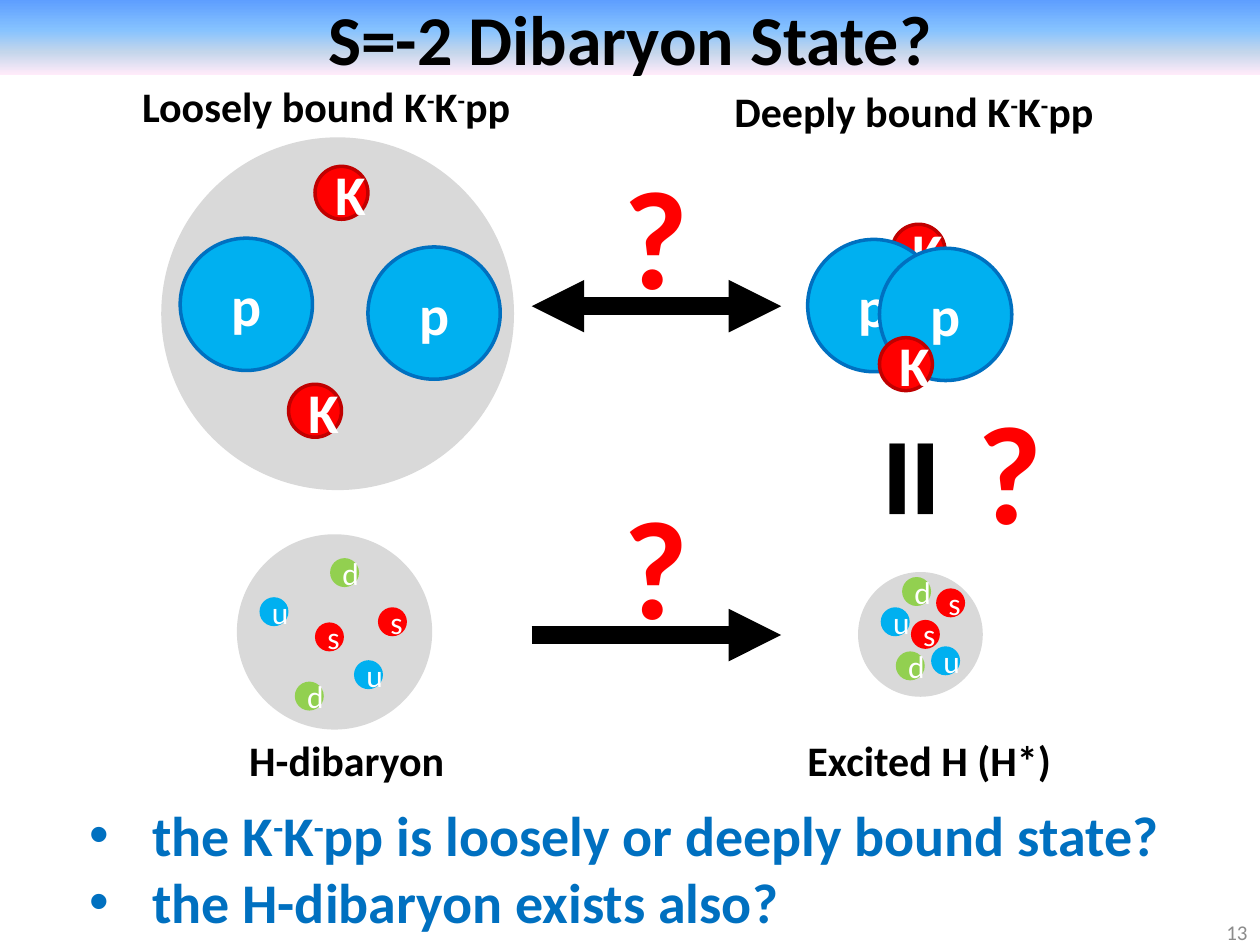
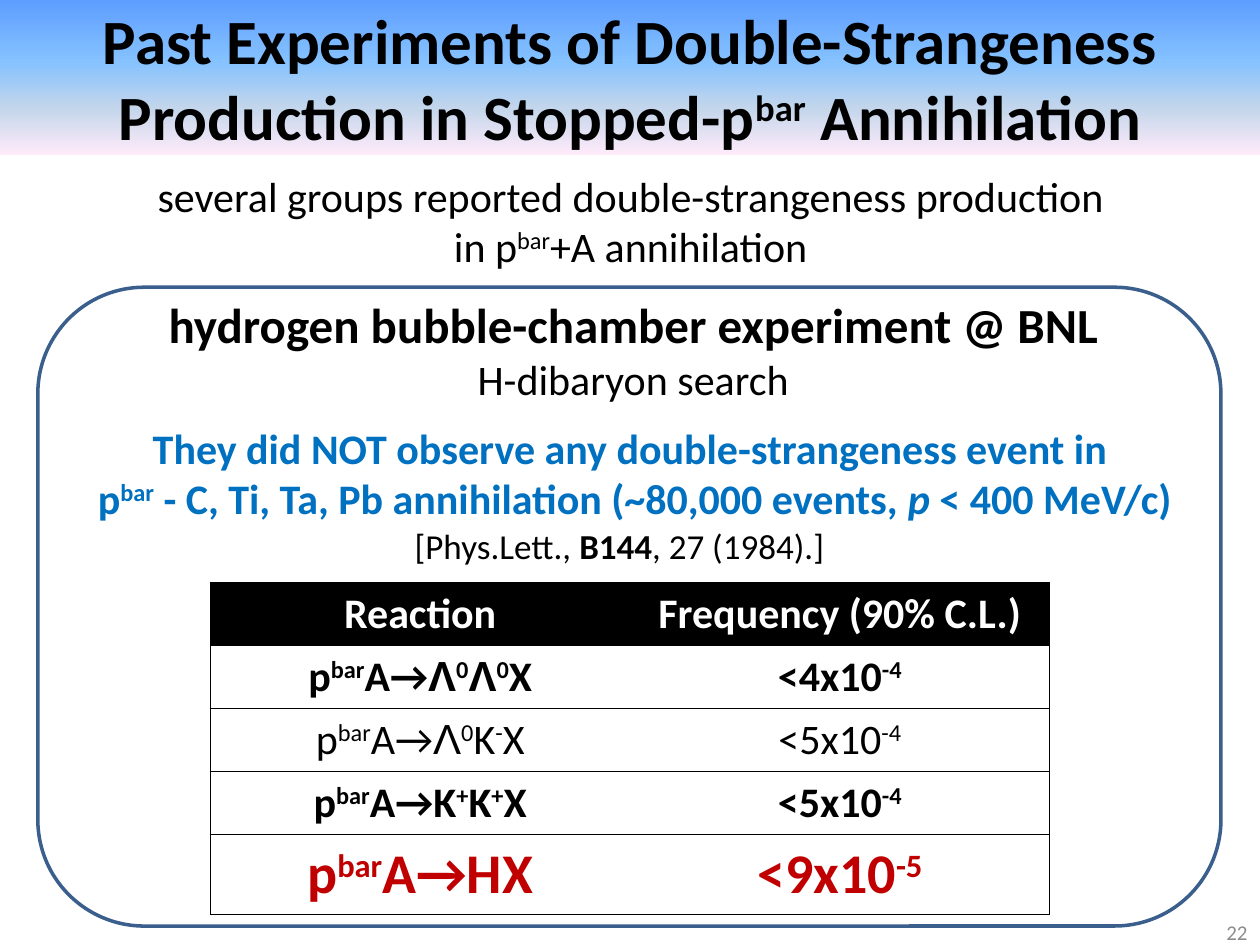
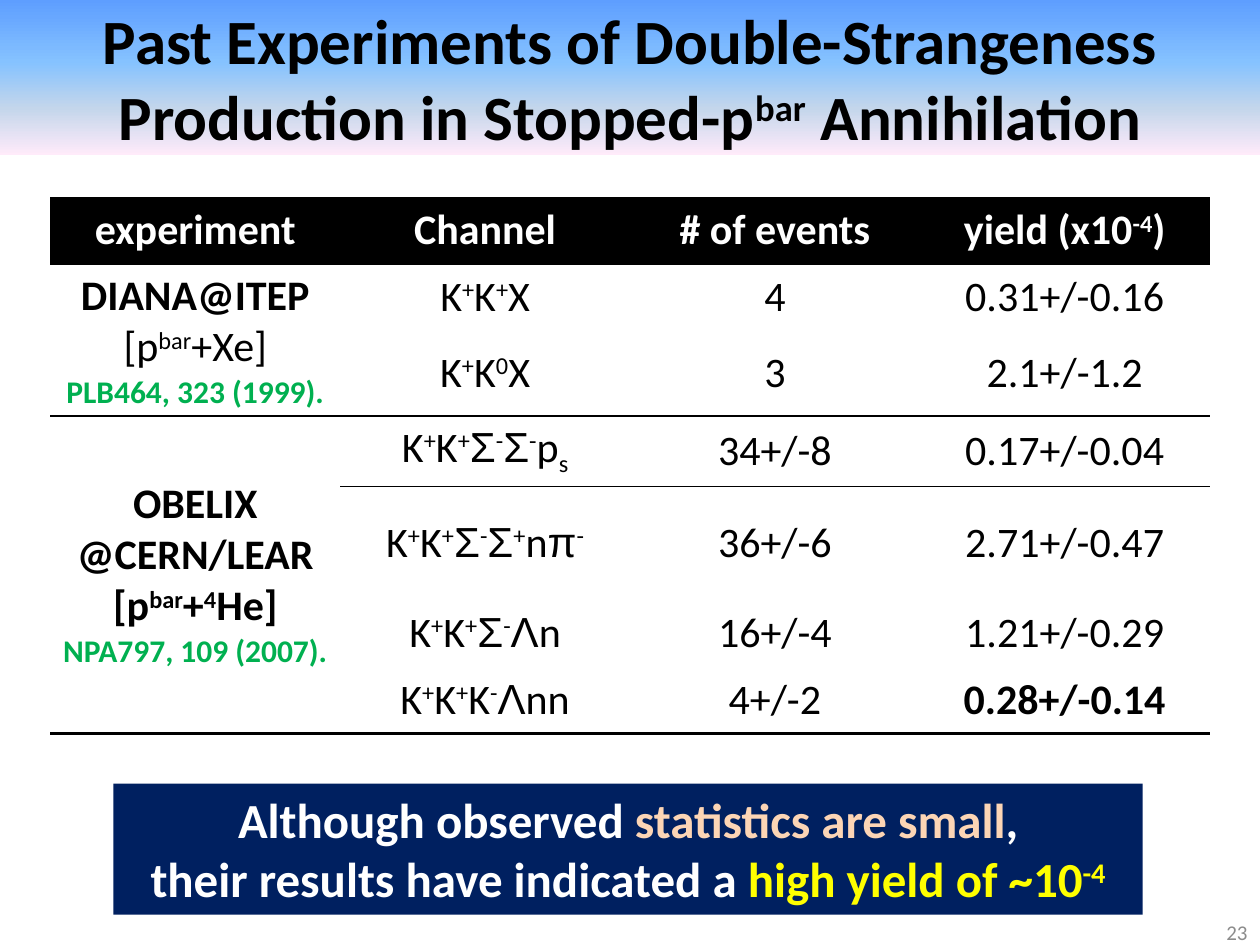
from lxml import etree
from pptx import Presentation
from pptx.dml.color import RGBColor
from pptx.enum.shapes import MSO_CONNECTOR, MSO_SHAPE
from pptx.enum.text import MSO_ANCHOR, MSO_AUTO_SIZE, PP_ALIGN
from pptx.oxml import parse_xml
from pptx.oxml.ns import nsdecls, qn
from pptx.util import Inches, Pt

LEFT, CENTER, RIGHT = PP_ALIGN.LEFT, PP_ALIGN.CENTER, PP_ALIGN.RIGHT
MIDDLE, TOP = MSO_ANCHOR.MIDDLE, MSO_ANCHOR.TOP
OVAL, ROUNDED, RECT = MSO_SHAPE.OVAL, MSO_SHAPE.ROUNDED_RECTANGLE, MSO_SHAPE.RECTANGLE
STRAIGHT = MSO_CONNECTOR.STRAIGHT
FIT = MSO_AUTO_SIZE.SHAPE_TO_FIT_TEXT

COLORS = {
    "black": "000000", "white": "FFFFFF", "gray": "D9D9D9", "number": "8C8C8C",
    "red": "FF0000", "dark_red": "C00000", "sky": "00B0F0", "blue": "0070C0",
    "lime": "92D050", "green": "00B050", "navy": "002060", "outline": "3A5F8C",
    "peach": "FCD5B5", "yellow": "FFFF00",
}
RGB = {name: RGBColor.from_string(value) for name, value in COLORS.items()}
BAND = [(0, "5E9EFF"), (40, "85C2FF"), (70, "C4D6EB"), (100, "FFEBFA")]
MARKS = {
    "^": {"baseline": "30000"}, "_": {"baseline": "-25000"},
    "!": {"bold": True}, "/": {"italic": True},
    "§": {"color": "peach"}, "¤": {"color": "yellow"},
}
NO_STYLE = "{2D5ABB26-0587-4C30-8999-92F81FD0307C}"


def write(tf, paras, align, **base):
    for i, para in enumerate(paras):
        text, extra = (para, {}) if isinstance(para, str) else para
        p = tf.add_paragraph() if i else tf.paragraphs[0]
        p.alignment = align
        for part in text.split("|"):
            fmt = {"name": "Calibri", "bold": False, "color": "black", **base, **extra}
            while part[0] in MARKS:
                fmt.update(MARKS[part[0]])
                part = part[1:]
            if part in "ΛΣπ":
                fmt["name"] = "Arial"
            r = p.add_run()
            r.text = part
            r.font.color.rgb = RGB[fmt.pop("color")]
            if "baseline" in fmt:
                r.font._element.set("baseline", fmt.pop("baseline"))
            fmt["size"] = Pt(fmt["size"])
            for key, value in fmt.items():
                setattr(r.font, key, value)


def finish_cell(cell, fill, anchor, borders):
    cell.fill.solid()
    cell.fill.fore_color.rgb = RGB[fill]
    cell.vertical_anchor = anchor
    tc_pr = cell._tc.get_or_add_tcPr()
    for i, (side, width) in enumerate(borders):
        tc_pr.insert(i, parse_xml(
            f'<a:ln{side} {nsdecls("a")} w="{Pt(width)}"><a:solidFill>'
            f'<a:srgbClr val="{COLORS["black"]}"/></a:solidFill></a:ln{side}>'))


prs = Presentation()
prs.slide_width, prs.slide_height = Inches(10), Inches(7.5)

past = "Past Experiments of Double-Strangeness Production in Stopped-p|^bar| Annihilation"
titles = [
    ("S=-2 Dibaryon State?", 40, 0.59, "13"),
    (past, 36, 1.23, "22"),
    (past, 36, 1.23, "23"),
]
stops = "".join(f'<a:gs pos="{pos * 1000}"><a:srgbClr val="{c}"/></a:gs>' for pos, c in BAND)
slides = []
for title, size, height, number in titles:
    s = prs.slides.add_slide(prs.slide_layouts[5])
    sp = s.shapes.title
    sp.left, sp.top, sp.width, sp.height = 0, 0, prs.slide_width, Inches(height)
    sp._element.spPr.append(parse_xml(
        f'<a:gradFill {nsdecls("a")} rotWithShape="1"><a:gsLst>{stops}</a:gsLst>'
        '<a:lin ang="5400000" scaled="0"/></a:gradFill>'))
    sp.text_frame.auto_size = MSO_AUTO_SIZE.NONE
    sp.text_frame.vertical_anchor = MIDDLE
    write(sp.text_frame, [title], CENTER, size=size, bold=True)
    sp = s.shapes.add_textbox(Inches(7.67), Inches(7.2), Inches(2.33), Inches(0.4))
    sp.text_frame.vertical_anchor = MIDDLE
    write(sp.text_frame, [number], RIGHT, size=12, color="number")
    slides.append(s)
states, bubble, yields = slides

PARTICLES = {
    "K": (0.42, "red", "dark_red", 32), "p": (1.05, "sky", "blue", 32),
    "u": (0.23, "sky", None, 18), "d": (0.23, "lime", None, 18),
    "s": (0.23, "red", None, 18),
}
groups = [
    ((1.28, 1.09, 2.8), [("K", 2.5, 1.32), ("p", 1.43, 1.89), ("p", 2.92, 1.96),
                         ("K", 2.29, 3.05)]),
    (None, [("K", 7.08, 1.78), ("p", 6.41, 1.9), ("p", 6.98, 1.97), ("K", 6.98, 2.68)]),
    ((6.81, 4.54, 0.99), [("u", 6.99, 4.82), ("u", 7.39, 5.13), ("d", 7.16, 4.58),
                          ("d", 7.11, 5.17), ("s", 7.23, 4.92), ("s", 7.43, 4.67)]),
    ((1.88, 4.24, 1.55), [("u", 2.06, 4.74), ("u", 2.81, 5.24), ("d", 2.62, 4.43),
                          ("d", 2.34, 5.41), ("s", 2.5, 4.94), ("s", 3, 4.82)]),
]
panels = []
for halo, particles in groups:
    if halo:
        x, y, d = halo
        panels.append((states, OVAL, (x, y, d, d), "gray", None, None, 0))
    for label, x, y in particles:
        d, fill, line, size = PARTICLES[label]
        panels.append((states, OVAL, (x, y, d, d), fill, line, label, size))
panels.append((bubble, ROUNDED, (0.3, 2.28, 9.39, 5.07), None, "outline", None, 0))

for s, kind, box, fill, line, label, size in panels:
    sp = s.shapes.add_shape(kind, *map(Inches, box))
    sp.shadow.inherit = False
    if fill:
        sp.fill.solid()
        sp.fill.fore_color.rgb = RGB[fill]
    else:
        sp.fill.background()
    if line:
        sp.line.color.rgb = RGB[line]
        sp.line.width = Pt(2)
    else:
        sp.line.fill.background()
    if label:
        write(sp.text_frame, [label], CENTER, size=size, bold=size > 18, color="white")

for y, ends in [(2.43, ("headEnd", "tailEnd")), (5.04, ("tailEnd",))]:
    sp = states.shapes.add_connector(STRAIGHT, Inches(4.22), Inches(y), Inches(6.2), Inches(y))
    sp.line.color.rgb = RGB["black"]
    sp.line.width = Pt(10)
    for end in ends:
        etree.SubElement(sp.line._get_or_add_ln(), qn(f"a:{end}"), type="triangle")
    etree.SubElement(sp._element.spPr, qn("a:effectLst"))

label = {"size": 24, "bold": True}
query = {"size": 80, "bold": True, "color": "red"}
texts = [
    (states, (1.03, 0.59, 3.24, 0.5), ["Loosely bound K|^-|K|^-|pp"], LEFT, False, label),
    (states, (5.73, 0.63, 3.13, 0.5), ["Deeply bound K|^-|K|^-|pp"], LEFT, False, label),
    (states, (6.31, 5.78, 2.15, 0.5), ["Excited H (H*)"], LEFT, False, label),
    (states, (1.88, 5.78, 1.77, 0.5), ["H-dibaryon"], LEFT, False, label),
    (states, (4.85, 1.14, 0.72, 1.45), ["?"], LEFT, False, query),
    (states, (7.66, 3, 0.72, 1.45), ["?"], LEFT, False, query),
    (states, (4.85, 3.76, 0.72, 1.45), ["?"], LEFT, False, query),
    (states, (6.9, 2.95, 0.87, 1.72), ["="], LEFT, False, {"size": 96, "bold": True}),
    (states, (0.61, 6.3, 8.79, 1.18),
     ["the K|^-|K|^-|pp is loosely or deeply bound state?", "the H-dibaryon exists also?"],
     LEFT, False, {"size": 32, "bold": True, "color": "blue"}),
    (bubble, (0.15, 1.3, 9.71, 0.91),
     ["several groups reported double-strangeness production", "in p|^bar|+A annihilation"],
     CENTER, True, {"size": 24}),
    (bubble, (1.19, 2.29, 7.67, 0.98),
     [("hydrogen bubble-chamber experiment @ BNL", {"size": 28, "bold": True}),
      "H-dibaryon search"], CENTER, True, {"size": 24}),
    (bubble, (0.33, 3.3, 9.34, 0.91),
     ["They did NOT observe any double-strangeness event in",
      " p|^bar| - C, Ti, Ta, Pb annihilation (~80,000 events, |/p| < 400 MeV/c)"],
     CENTER, True, {"size": 24, "bold": True, "color": "blue"}),
    (bubble, (3.13, 4.11, 3.55, 0.44), [" [Phys.Lett., |!B144|, 27 (1984).]"],
     LEFT, False, {"size": 20}),
    (yields, (0.9, 6.22, 8.17, 1.04),
     ["Although observed |§statistics are small|,",
      "their results have indicated a |¤high yield of ~10|¤^-4"],
     CENTER, True, {"size": 28, "bold": True, "color": "white"}),
]
for s, box, paras, align, wrap, fmt in texts:
    sp = s.shapes.add_textbox(*map(Inches, box))
    sp.text_frame.word_wrap = wrap
    sp.text_frame.auto_size = FIT
    write(sp.text_frame, paras, align, **fmt)
    if paras == ["="]:
        sp.rotation = 90
    if s is states and len(paras) == 2:
        for p in sp.text_frame.paragraphs:
            p_pr = p._p.get_or_add_pPr()
            p_pr.set("marL", str(Inches(0.5)))
            p_pr.set("indent", str(-Inches(0.5)))
            etree.SubElement(p_pr, qn("a:buFont"), typeface="Arial")
            etree.SubElement(p_pr, qn("a:buChar"), char="•")
    if s is yields:
        sp.fill.solid()
        sp.fill.fore_color.rgb = RGB["navy"]

reactions = [
    ["Reaction", "Frequency (90% C.L.)"],
    ["p|^bar|A→|Λ|^0|Λ|^0|X", "<4x10|^-4"],
    ["p|^bar|A→|Λ|^0|K|^-|X", "<5x10|^-4"],
    ["p|^bar|A→K|^+|K|^+|X", "<5x10|^-4"],
    ["p|^bar|A→HX", "<9x10|^-5"],
]
reference = {"size": 18, "bold": True, "color": "green"}
diana = [("DIANA@ITEP", {"bold": True}), "[p|^bar|+Xe]", ("PLB464, 323 (1999).", reference)]
obelix = [("OBELIX", {"bold": True}), ("@CERN/LEAR", {"bold": True}),
          ("[p|^bar|+|^4|He]", {"bold": True}), ("NPA797, 109 (2007).", reference)]
channels = [
    ["experiment", "Channel", "# of events", "yield (x10|^-4|)"],
    [diana, "K|^+|K|^+|X", "4", "0.31+/-0.16"],
    [None, "K|^+|K|^0|X", "3", "2.1+/-1.2"],
    [obelix, "K|^+|K|^+|Σ|^-|Σ|^-|p|_s", "34+/-8", "0.17+/-0.04"],
    [None, "K|^+|K|^+|Σ|^-|Σ|^+|n|π|^-", "36+/-6", "2.71+/-0.47"],
    [None, "K|^+|K|^+|Σ|^-|Λ|n", "16+/-4", "1.21+/-0.29"],
    [None, "K|^+|K|^+|K|^-|Λ|nn", "4+/-2", "!0.28+/-0.14"],
]
tables = [
    (bubble, reactions, (1.67, 4.62), 3.33, [0.5, 0.5, 0.5, 0.5, 0.63], TOP, []),
    (yields, channels, (0.4, 1.56), 2.3, [0.54, 0.52, 0.68, 0.56, 0.9, 0.53, 0.53], MIDDLE,
     [(1, 2), (3, 6)]),
]
line_below = {2: 1, 3: 1, 6: 2}
line_below_experiment = {1: 1, 2: 1, 3: 2, 6: 2}
for s, rows, (x, y), width, heights, anchor, spans in tables:
    frame = s.shapes.add_table(len(rows), len(rows[0]), Inches(x), Inches(y),
                               Inches(width * len(rows[0])), Inches(sum(heights)))
    table = frame.table
    table.first_row = table.horz_banding = False
    table._tbl.tblPr[0].text = NO_STYLE
    for col in table.columns:
        col.width = Inches(width)
    for i, row in enumerate(rows):
        table.rows[i].height = Inches(heights[i])
        for j, content in enumerate(row):
            cell = table.cell(i, j)
            fmt = {"size": 24, "bold": i == 0, "color": "black" if i else "white"}
            if s is bubble:
                borders = [("R" if j else "L", 0.75), ("T", 0.75), ("B", 0.75)]
                fmt["bold"] = i != 2
                if i == 4:
                    fmt.update(size=32, color="dark_red")
            else:
                below = line_below if j else line_below_experiment
                borders = [("B", below[i])] if i in below else []
            if content:
                paras = [content] if isinstance(content, str) else content
                write(cell.text_frame, paras, CENTER, **fmt)
            finish_cell(cell, "white" if i else "black", anchor, borders)
    for first, last in spans:
        table.cell(first, 0).merge(table.cell(last, 0))

prs.save("out.pptx")
